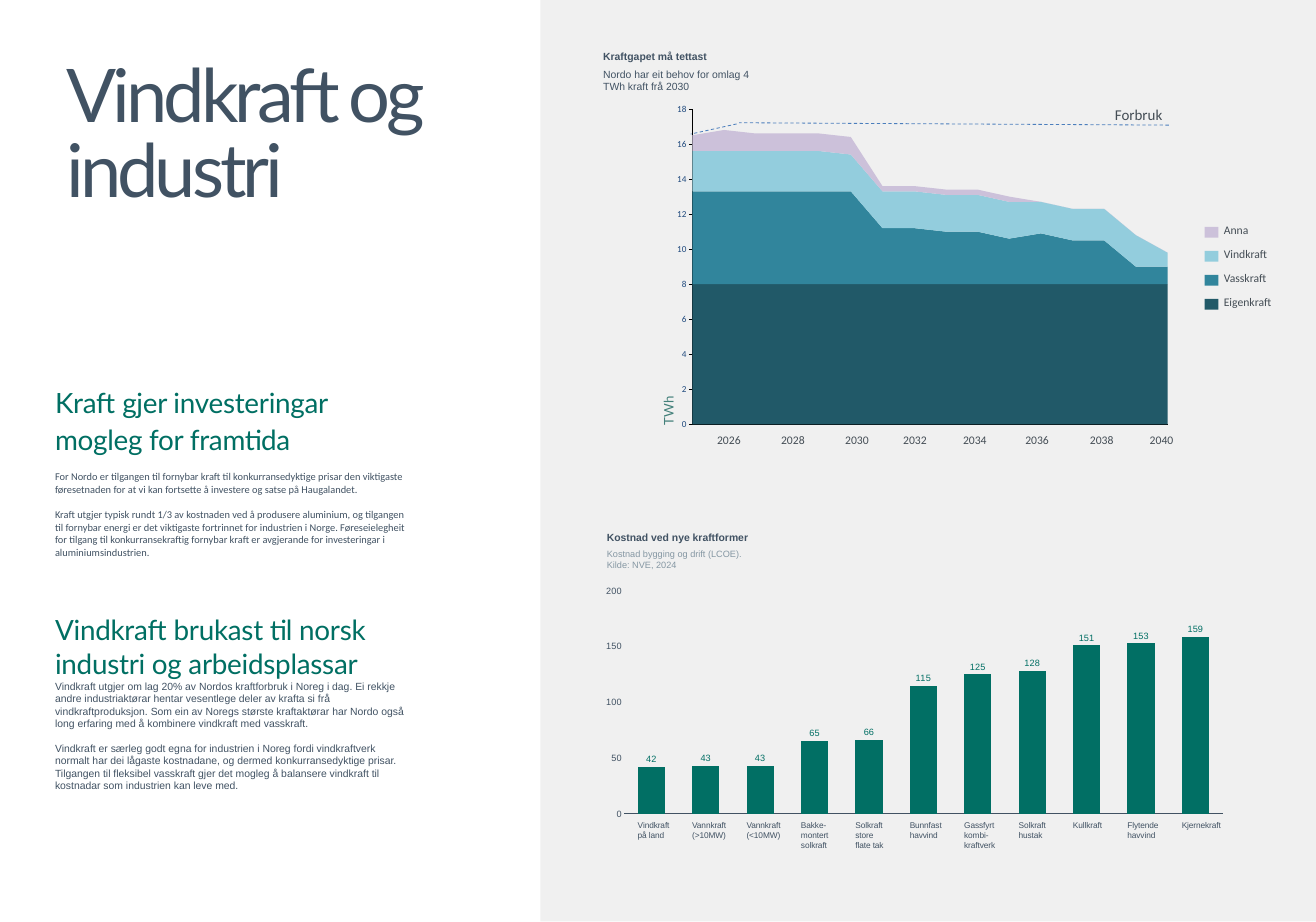
"""Build the slide on wind power and industry in Norway."""
from lxml import etree
from pptx import Presentation
from pptx.chart.data import CategoryChartData
from pptx.dml.color import RGBColor
from pptx.enum.chart import XL_CHART_TYPE, XL_LABEL_POSITION, XL_TICK_LABEL_POSITION, XL_TICK_MARK
from pptx.enum.dml import MSO_LINE
from pptx.enum.shapes import MSO_CONNECTOR, MSO_SHAPE
from pptx.enum.text import MSO_ANCHOR, PP_ALIGN
from pptx.oxml.ns import qn
from pptx.util import Pt

PX = 9144
AREA, COLUMN = XL_CHART_TYPE.AREA_STACKED, XL_CHART_TYPE.COLUMN_CLUSTERED
NO_TICK, TICK_OUT = XL_TICK_MARK.NONE, XL_TICK_MARK.OUTSIDE
NO_LABELS, LABEL_ABOVE = XL_TICK_LABEL_POSITION.NONE, XL_LABEL_POSITION.OUTSIDE_END
RECT, STRAIGHT, DASH = MSO_SHAPE.RECTANGLE, MSO_CONNECTOR.STRAIGHT, MSO_LINE.DASH
LEFT, CENTER = PP_ALIGN.LEFT, PP_ALIGN.CENTER
TOP, MIDDLE = MSO_ANCHOR.TOP, MSO_ANCHOR.MIDDLE

COLORS = {
    "panel": "F0F0F0", "slate": "415263", "heading": "006F63", "bar": "016F64",
    "muted": "8597A3", "label": "444D55", "unit": "43807A", "demand": "4B7EBC",
    "scale": "1F497D", "axis": "000000", "Eigenkraft": "215968",
    "Vasskraft": "31859C", "Vindkraft": "93CDDD", "Anna": "CCC1DA",
}

STYLES = {
    "title": ("Lato", 89, "slate", False, -4.8),
    "heading": ("Lato", 33.5, "heading", False, -0.3),
    "calibri_body": ("Calibri", 12.5, "slate", False, 0),
    "arial_body": ("Arial", 12.5, "slate", False, 0),
    "chart_title": ("Arial", 12.5, "slate", True, 0),
    "source": ("Arial", 11, "muted", False, 0),
    "category": ("Arial", 10, "slate", False, -0.1),
    "label": ("Calibri", 14, "label", False, 0),
    "demand": ("Calibri", 18, "label", False, 0),
    "unit": ("Lato", 16, "unit", False, 0),
}

TEXT_BLOCKS = [
    ((111, 103, 697, 255), [("title", "Vindkraft og industri", 0, Pt(90.5))]),
    ((92, 637, 590, 310), [
        ("heading", "Kraft gjer investeringar mogleg for framtida", 0, 1.12),
        ("calibri_body", "For Nordo er tilgangen til fornybar kraft til konkurransedyktige prisar den "
         "viktigaste føresetnaden for at vi kan fortsette å investere og satse på Haugalandet.", 17, 1),
        ("calibri_body", "Kraft utgjer typisk rundt 1/3 av kostnaden ved å produsere aluminium, og "
         "tilgangen til fornybar energi er det viktigaste fortrinnet for industrien i Norge. "
         "Føreseielegheit for tilgang til konkurransekraftig fornybar kraft er avgjerande for "
         "investeringar i aluminiumsindustrien.", 16, 1),
    ]),
    ((92, 1024, 590, 310), [
        ("heading", "Vindkraft brukast til norsk industri og arbeidsplassar", 0, 1),
        ("arial_body", "Vindkraft utgjer om lag 20% av Nordos kraftforbruk i Noreg i dag. Ei rekkje "
         "andre industriaktørar hentar vesentlege deler av krafta si frå vindkraftproduksjon. Som ein "
         "av Noregs største kraftaktørar har Nordo også long erfaring med å kombinere vindkraft med "
         "vasskraft.", 0, 1),
        ("arial_body", "Vindkraft er særleg godt egna for industrien i Noreg fordi vindkraftverk "
         "normalt har dei lågaste kostnadane, og dermed konkurransedyktige prisar. Tilgangen til "
         "fleksibel vasskraft gjer det mogleg å balansere vindkraft til kostnadar som industrien kan "
         "leve med.", 14.4, 1),
    ]),
    ((1008, 83, 250, 73), [
        ("chart_title", "Kraftgapet må tettast", 0, 1),
        ("arial_body", "Nordo har eit behov for omlag 4 TWh kraft frå 2030", 7, 1),
    ]),
    ((1014, 887, 250, 67), [
        ("chart_title", "Kostnad ved nye kraftformer", 0, 1),
        ("source", "Kostnad bygging og drift (LCOE). Kilde: NVE, 2024", 4.5, 1.06),
    ]),
    ((1863, 177, 90, 32), [("demand", "Forbruk", 0, 1)]),
]

SUPPLY = {
    "Eigenkraft": [8] * 16,
    "Vasskraft": [5.3] * 6 + [3.2, 3.2, 3, 3, 2.6, 2.9, 2.5, 2.5, 1, 1],
    "Vindkraft": [2.3] * 5 + [2.1] * 6 + [1.8] * 4 + [0.8],
    "Anna": [0.9, 1.2, 1, 1, 1, 1] + [0.3] * 5 + [0] * 5,
}
YEAR_CENTRES = {"2026": 1218, "2028": 1325, "2030": 1432, "2032": 1529,
                "2034": 1629, "2036": 1733, "2038": 1841, "2040": 1941}
DEMAND_LINES = [(1953, 209, 1235, 205), (1231, 207, 1154, 224)]

COSTS = [
    ("Vindkraft\npå land", 42), ("Vannkraft\n(>10MW)", 43), ("Vannkraft\n(<10MW)", 43),
    ("Bakke-\nmontert\nsolkraft", 65), ("Solkraft\nstore\nflate tak", 66),
    ("Bunnfast\nhavvind", 115), ("Gassfyrt\nkombi-\nkraftverk", 125),
    ("Solkraft\nhustak", 128), ("Kullkraft", 151), ("Flytende\nhavvind", 153),
    ("Kjernekraft", 159),
]
SUPPLY_FRAME, SUPPLY_PLOT = (1092, 150, 873, 591), (1157, 182, 794, 527)
COST_FRAME, COST_PLOT = (990, 950, 1070, 430), (1043, 987, 1000, 372)


def rgb(name):
    return RGBColor.from_string(COLORS[name])


def emu(*lengths):
    return [round(length * PX) for length in lengths]


def add_text(slide, box, paragraphs, align=LEFT, anchor=TOP, wrap=True):
    holder = slide.shapes.add_textbox(*emu(*box))
    frame = holder.text_frame
    frame.word_wrap, frame.vertical_anchor = wrap, anchor
    frame.margin_left = frame.margin_top = frame.margin_right = frame.margin_bottom = 0
    for number, (style, text, before, spacing) in enumerate(paragraphs):
        paragraph = frame.add_paragraph() if number else frame.paragraphs[0]
        paragraph.alignment, paragraph.line_spacing = align, spacing
        if before:
            paragraph.space_before = Pt(before)
        family, size, color, bold, tracking = STYLES[style]
        for line_number, line in enumerate(text.split("\n")):
            if line_number:
                paragraph.add_line_break()
            run = paragraph.add_run()
            run.text = line
            run.font.name, run.font.size, run.font.bold = family, Pt(size), bold
            run.font.color.rgb = rgb(color)
            run._r.get_or_add_rPr().set("spc", str(round(tracking * 100)))
    return holder


def add_block(slide, box, color):
    block = slide.shapes.add_shape(RECT, *emu(*box))
    block.shadow.inherit = False
    block.fill.solid()
    block.fill.fore_color.rgb = rgb(color)
    block.line.fill.background()


def set_font(font, family, size, color):
    font.name, font.size, font.color.rgb = family, Pt(size), rgb(color)


def add_plot(slide, kind, frame, plot_box, categories, series, top, step):
    data = CategoryChartData()
    data.categories = categories
    for name, values in series.items():
        data.add_series(name, values)
    chart = slide.shapes.add_chart(kind, *emu(*frame), data).chart
    chart.has_legend = chart.has_title = False
    plot_area = chart._chartSpace.chart.plotArea
    for layout in plot_area.findall(qn("c:layout")):
        plot_area.remove(layout)
    layout = etree.Element(qn("c:layout"))
    manual = etree.SubElement(layout, qn("c:manualLayout"))
    left, upper, width, height = frame
    x, y, w, h = plot_box
    for tag, value in [("layoutTarget", "inner"), ("xMode", "edge"), ("yMode", "edge"),
                       ("x", (x - left) / width), ("y", (y - upper) / height),
                       ("w", w / width), ("h", h / height)]:
        etree.SubElement(manual, qn("c:" + tag)).set("val", str(value))
    plot_area.insert(0, layout)
    chart.plots[0].vary_by_categories = False
    chart.category_axis.tick_label_position = NO_LABELS
    chart.category_axis.major_tick_mark = NO_TICK
    scale = chart.value_axis
    scale.minimum_scale, scale.maximum_scale, scale.major_unit = 0, top, step
    scale.has_major_gridlines = False
    for part, color in zip(chart.plots[0].series, series):
        part.format.fill.solid()
        part.format.fill.fore_color.rgb = rgb(color if color in COLORS else "bar")
        part.format.line.fill.background()
    return chart


def add_supply(slide):
    chart = add_plot(slide, AREA, SUPPLY_FRAME, SUPPLY_PLOT,
                     [str(n) for n in range(1, 17)], SUPPLY, 18, 2)
    for axis in (chart.category_axis, chart.value_axis):
        axis.format.line.color.rgb, axis.format.line.width = rgb("axis"), Pt(0.75)
    chart.value_axis.major_tick_mark = TICK_OUT
    chart.value_axis._element.find(qn("c:crossBetween")).set("val", "midCat")
    set_font(chart.value_axis.tick_labels.font, "Calibri", 11, "scale")
    for year, centre in YEAR_CENTRES.items():
        add_text(slide, (centre - 30, 725, 60, 21), [("label", year, 0, 0.9)], CENTER, wrap=False)
    for row, source in enumerate(reversed(SUPPLY)):
        y = 379 + 40 * row
        add_block(slide, (2013, y, 23, 18), source)
        add_text(slide, (2045, y - 2, 120, 18), [("label", source, 0, 0.9)], anchor=MIDDLE)
    for ends in DEMAND_LINES:
        demand = slide.shapes.add_connector(STRAIGHT, *emu(*ends))
        demand.line.color.rgb, demand.line.width = rgb("demand"), Pt(1)
        demand.line.dash_style = DASH
        etree.SubElement(demand._element.spPr, qn("a:effectLst"))
    unit = add_text(slide, (967, 547, 300, 27), [("unit", "TWh", 0, 1)])
    unit.rotation = 270


def add_costs(slide):
    chart = add_plot(slide, COLUMN, COST_FRAME, COST_PLOT,
                     [name.replace("\n", " ") for name, _ in COSTS],
                     {"Kostnad": [cost for _, cost in COSTS]}, 200, 50)
    bars = chart.plots[0]
    bars.gap_width, bars.has_data_labels = 100, True
    bars.data_labels.show_value, bars.data_labels.position = True, LABEL_ABOVE
    set_font(bars.data_labels.font, "Arial", 11, "bar")
    set_font(chart.value_axis.tick_labels.font, "Arial", 11, "slate")
    chart.value_axis.major_tick_mark = NO_TICK
    chart.value_axis.format.line.fill.background()
    baseline = chart.category_axis.format.line
    baseline.color.rgb, baseline.width = rgb("slate"), Pt(0.75)
    pitch = COST_PLOT[2] / len(COSTS)
    for column, (name, _) in enumerate(COSTS):
        x = COST_PLOT[0] + pitch * (column + 0.25)
        add_text(slide, (x, 1370, 80, 52), [("category", name, 0, 1)])


def main():
    deck = Presentation()
    deck.slide_width, deck.slide_height = emu(2199, 1540)
    slide = deck.slides.add_slide(deck.slide_layouts[6])
    add_block(slide, (903, 0, 1296, 1539), "panel")
    add_supply(slide)
    add_costs(slide)
    for box, paragraphs in TEXT_BLOCKS:
        add_text(slide, box, paragraphs)
    deck.save("out.pptx")


if __name__ == "__main__":
    main()
